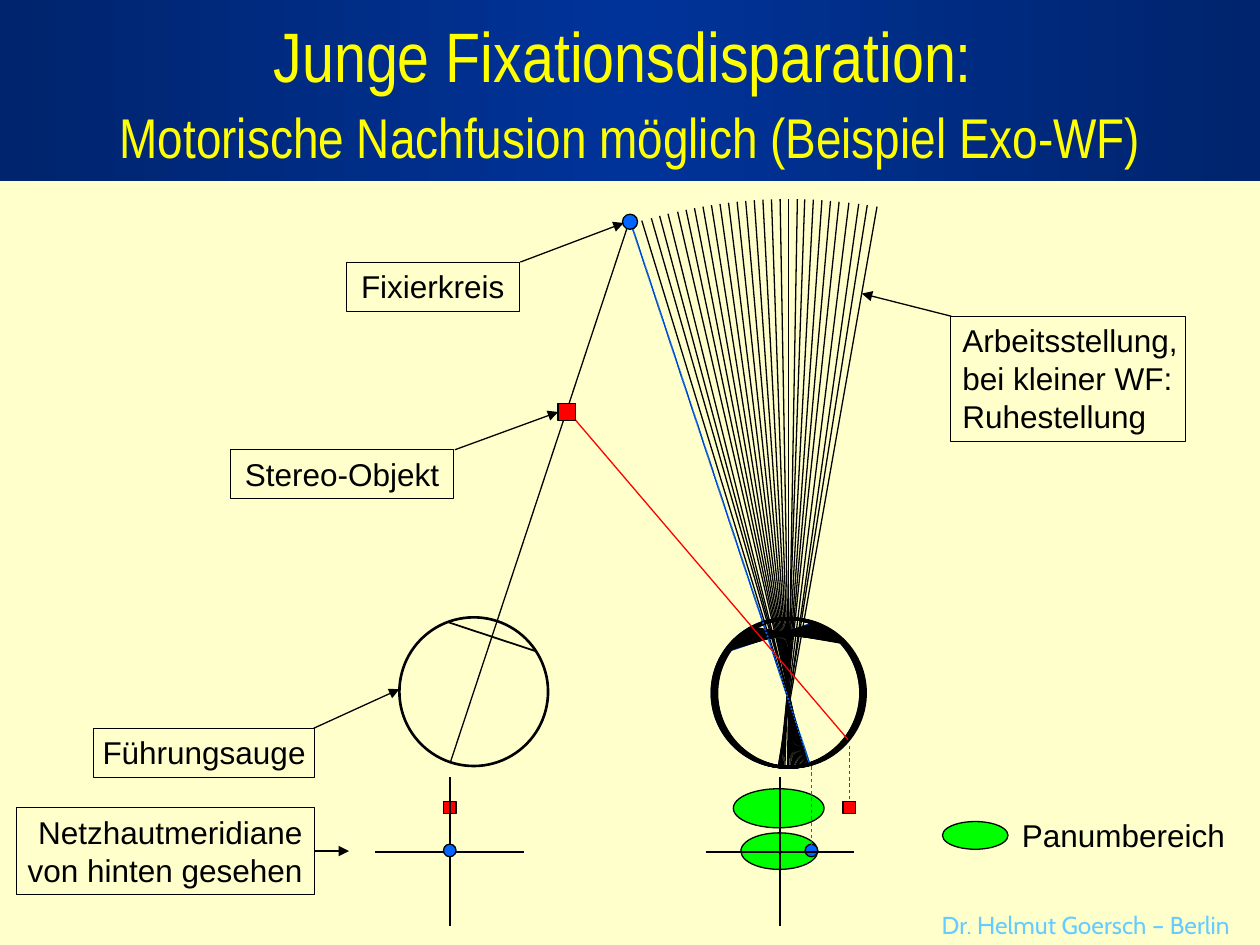
from copy import deepcopy
from dataclasses import dataclass
from math import cos, radians, sin

from lxml.etree import SubElement
from pptx import Presentation
from pptx.dml.color import RGBColor
from pptx.enum.dml import MSO_LINE
from pptx.enum.shapes import MSO_CONNECTOR, MSO_SHAPE as Kind
from pptx.enum.text import MSO_ANCHOR as Anchor, PP_ALIGN as Align
from pptx.oxml.ns import qn
from pptx.util import Inches, Pt

Point = tuple[float, float]
Box = tuple[float, float, float, float]


@dataclass(frozen=True)
class Theme:
    background: str = "FFFFCC"
    band_edge: str = "00246D"
    band_middle: str = "003399"
    title: str = "FFFF00"
    ink: str = "000000"
    fixation: str = "0066FF"
    stereo: str = "FF0000"
    panum: str = "00FF00"
    author: str = "66CCFF"
    title_font: str = "Arial Narrow"
    label_font: str = "Arial"
    author_font: str = "Cabin"
    title_size: float = 40
    subtitle_size: float = 32
    label_size: float = 18
    author_size: float = 14


THEME = Theme()


@dataclass(frozen=True)
class Marker:
    kind: Kind
    box: Box
    color: str


@dataclass(frozen=True)
class Callout:
    text: str
    box: Box
    align: Align
    start: Point
    tip: Point
    left_inset: float = 0.04
    right_inset: float = 0.04


def set_outline(line, color: str, width: float) -> None:
    line.color.rgb = RGBColor.from_string(color)
    line.width = Pt(width)


def draw_shape(shapes, kind: Kind, box: Box, fill: str | None = None,
               width: float = 0.75, color: str = THEME.ink):
    shape = shapes.add_shape(kind, *map(Inches, box))
    shape.shadow.inherit = False
    if fill:
        shape.fill.solid()
        shape.fill.fore_color.rgb = RGBColor.from_string(fill)
    else:
        shape.fill.background()
    set_outline(shape.line, color, width)
    return shape


def draw_line(shapes, start: Point, end: Point, color: str = THEME.ink,
              width: float = 0.75, dash=None, arrow: bool = False):
    line = shapes.add_connector(MSO_CONNECTOR.STRAIGHT, *map(Inches, start + end))
    set_outline(line.line, color, width)
    if dash:
        line.line.dash_style = dash
    if arrow:
        SubElement(line.line._get_or_add_ln(), qn("a:tailEnd"), type="triangle")
    SubElement(line._element.spPr, qn("a:effectLst"))
    return line


def write_text(shape, text: str, font: str, size: float, color: str,
               align: Align = Align.LEFT, insets: Box = (0, 0, 0, 0),
               anchor: Anchor = Anchor.TOP, wrap: bool = True,
               spacing: float = 1.0) -> None:
    frame = shape.text_frame
    frame.word_wrap = wrap
    frame.vertical_anchor = anchor
    (frame.margin_left, frame.margin_top,
     frame.margin_right, frame.margin_bottom) = map(Inches, insets)
    paragraph = frame.paragraphs[0]
    paragraph.text = text
    paragraph.alignment = align
    paragraph.line_spacing = spacing
    for run in paragraph.runs:
        run.font.name = font
        run.font.size = Pt(size)
        run.font.color.rgb = RGBColor.from_string(color)


def draw_eye(shapes, center: Point, angle: float, color: str = THEME.ink) -> tuple[Point, Point]:
    """Draw an eye turned clockwise by angle; return the ends of its line of sight."""
    turn = radians(angle)

    def place(x: float, y: float) -> Point:
        return (center[0] + x * cos(turn) - y * sin(turn),
                center[1] + x * sin(turn) + y * cos(turn))

    eye = shapes.add_group_shape().shapes
    radius = 0.59
    ball = draw_shape(eye, Kind.OVAL, (center[0] - radius, center[1] - radius, 2 * radius, 2 * radius),
                      width=1.5, color=color)
    ball.rotation = angle % 360
    draw_line(eye, place(-0.36, -0.46), place(0.36, -0.46), color, 1)
    sight = place(0, 0.58), place(0, -3.92)
    draw_line(eye, *sight, color)
    return sight


def draw_cross(shapes, x: float, y: float) -> None:
    arm = 0.59
    draw_line(shapes, (x - arm, y), (x + arm, y), width=1)
    draw_line(shapes, (x, y - arm), (x, y + arm), width=1)


def draw_marker(shapes, marker: Marker):
    return draw_shape(shapes, marker.kind, marker.box, marker.color)


def draw_callout(shapes, callout: Callout):
    box = draw_shape(shapes, Kind.RECTANGLE, callout.box, width=0.5)
    write_text(box, callout.text, THEME.label_font, THEME.label_size, THEME.ink, callout.align,
               (callout.left_inset, 0.04, callout.right_inset, 0.04))
    return box, draw_line(shapes, callout.start, callout.tip, arrow=True)


def draw_header(shapes) -> None:
    band = draw_shape(shapes, Kind.RECTANGLE, (0, 0, 10, 1.44), THEME.band_edge)
    band.line.fill.background()
    band.fill.gradient()
    band.fill.gradient_angle = 0
    stop_list = band._element.spPr.find(".//" + qn("a:gsLst"))
    stop_list.append(deepcopy(stop_list[0]))
    colors = (THEME.band_edge, THEME.band_middle, THEME.band_edge)
    for index, (stop, color) in enumerate(zip(band.fill.gradient_stops, colors)):
        stop.position = index / 2
        stop.color.rgb = RGBColor.from_string(color)
    for text, top, height, size, anchor in (
            ("Junge Fixationsdisparation: ", 0.03, 0.73, THEME.title_size, Anchor.TOP),
            ("Motorische Nachfusion möglich (Beispiel Exo-WF)", 0.76, 0.59,
             THEME.subtitle_size, Anchor.BOTTOM)):
        title = shapes.add_textbox(*map(Inches, (0.4, top, 9.21, height)))
        write_text(title, text, THEME.title_font, size, THEME.title, Align.CENTER,
                   anchor=anchor, spacing=1.1)


PANUM_AREAS = (
    Marker(Kind.OVAL, (5.88, 6.61, 0.61, 0.29), THEME.panum),
    Marker(Kind.OVAL, (7.48, 6.52, 0.52, 0.22), THEME.panum),
    Marker(Kind.OVAL, (5.82, 6.26, 0.72, 0.31), THEME.panum),
)
LEFT_STEREO = Marker(Kind.RECTANGLE, (3.52, 6.36, 0.1, 0.1), THEME.stereo)
RIGHT_STEREO = Marker(Kind.RECTANGLE, (6.69, 6.36, 0.1, 0.1), THEME.stereo)
STEREO_OBJECT = Marker(Kind.RECTANGLE, (4.43, 3.2, 0.14, 0.14), THEME.stereo)
LEFT_FIXATION = Marker(Kind.OVAL, (3.52, 6.7, 0.1, 0.1), THEME.fixation)
RIGHT_FIXATION = Marker(Kind.OVAL, (6.39, 6.7, 0.1, 0.1), THEME.fixation)
FIXATION_CIRCLE = Marker(Kind.OVAL, (4.94, 1.7, 0.12, 0.12), THEME.fixation)

WORKING = Callout("Arbeitsstellung,\nbei kleiner WF:\nRuhestellung", (7.54, 2.51, 1.87, 0.99),
                  Align.LEFT, (7.55, 2.51), (6.84, 2.33), left_inset=0.1)
FIXATION = Callout("Fixierkreis", (2.75, 2.08, 1.37, 0.39), Align.CENTER, (4.13, 2.08), (4.95, 1.77))
STEREO = Callout("Stereo-Objekt", (1.83, 3.57, 1.77, 0.39), Align.CENTER, (3.61, 3.57), (4.43, 3.26))
LEADING_EYE = Callout("Führungsauge", (0.74, 5.78, 1.76, 0.39), Align.CENTER, (2.49, 5.78), (3.17, 5.47))
MERIDIANS = Callout("Netzhautmeridiane\nvon hinten gesehen", (0.13, 6.41, 2.37, 0.69),
                    Align.RIGHT, (2.5, 6.75), (2.77, 6.75), right_inset=0.1)

# Slight drift of the turning eye's centre at single angles
CENTER_X = {-17: 6.24, 8: 6.27, 9: 6.27, 10: 6.28} | dict.fromkeys((-16, -15, -14, 2, 3, 4, 5, 6), 6.25)


def main() -> None:
    presentation = Presentation()
    presentation.slide_width, presentation.slide_height = Inches(10), Inches(7.5)
    slide = presentation.slides.add_slide(presentation.slide_layouts[6])
    slide.background.fill.solid()
    slide.background.fill.fore_color.rgb = RGBColor.from_string(THEME.background)
    shapes = slide.shapes

    # Right eye turning from fixation to its resting position
    fixation_sight = draw_eye(shapes, (6.24, 5.5), -18.3, THEME.band_middle)
    for angle in range(-17, 11):
        draw_eye(shapes, (CENTER_X.get(angle, 6.26), 5.5), angle)

    draw_header(shapes)
    draw_callout(shapes, WORKING)

    # Panum areas and their legend
    for area in PANUM_AREAS:
        draw_marker(shapes, area)
    legend = shapes.add_textbox(*map(Inches, (8.11, 6.48, 1.72, 0.3)))
    write_text(legend, "Panumbereich", THEME.label_font, THEME.label_size, THEME.ink)

    # Stereo object's ray into the right eye
    right_stereo = draw_marker(shapes, RIGHT_STEREO)
    draw_line(shapes, (4.53, 3.29), (6.73, 5.87), THEME.stereo)
    stereo_drop = draw_line(shapes, (6.74, 5.92), (6.74, 6.36), THEME.stereo, 0.5, MSO_LINE.DASH)
    stereo_drop.end_connect(right_stereo, 0)

    # Left eye and retinal meridians
    draw_marker(shapes, LEFT_STEREO)
    draw_marker(shapes, RIGHT_FIXATION)
    draw_eye(shapes, (3.76, 5.49), 18.3)
    draw_cross(shapes, 3.57, 6.76)
    draw_marker(shapes, LEFT_FIXATION)
    draw_cross(shapes, 6.19, 6.76)

    # Fixation ray into the right eye
    draw_line(shapes, *fixation_sight, THEME.fixation, 1, MSO_LINE.ROUND_DOT)
    draw_marker(shapes, FIXATION_CIRCLE)
    draw_line(shapes, (6.44, 6.08), (6.44, 6.75), THEME.fixation, 0.5, MSO_LINE.DASH)

    # Callouts on the left
    draw_callout(shapes, FIXATION)
    stereo_object = draw_marker(shapes, STEREO_OBJECT)
    draw_callout(shapes, STEREO)[1].end_connect(stereo_object, 1)
    draw_callout(shapes, LEADING_EYE)
    meridian_box, meridian_arrow = draw_callout(shapes, MERIDIANS)
    meridian_arrow.begin_connect(meridian_box, 3)
    meridian_arrow.end_y = meridian_arrow.begin_y

    # Author
    author = shapes.add_textbox(*map(Inches, (7.25, 7.17, 2.61, 0.25)))
    write_text(author, "Dr. Helmut Goersch – Berlin", THEME.author_font, THEME.author_size,
               THEME.author, Align.RIGHT, (0.1, 0.05, 0.1, 0.05), wrap=False)

    presentation.save("out.pptx")


if __name__ == "__main__":
    main()
